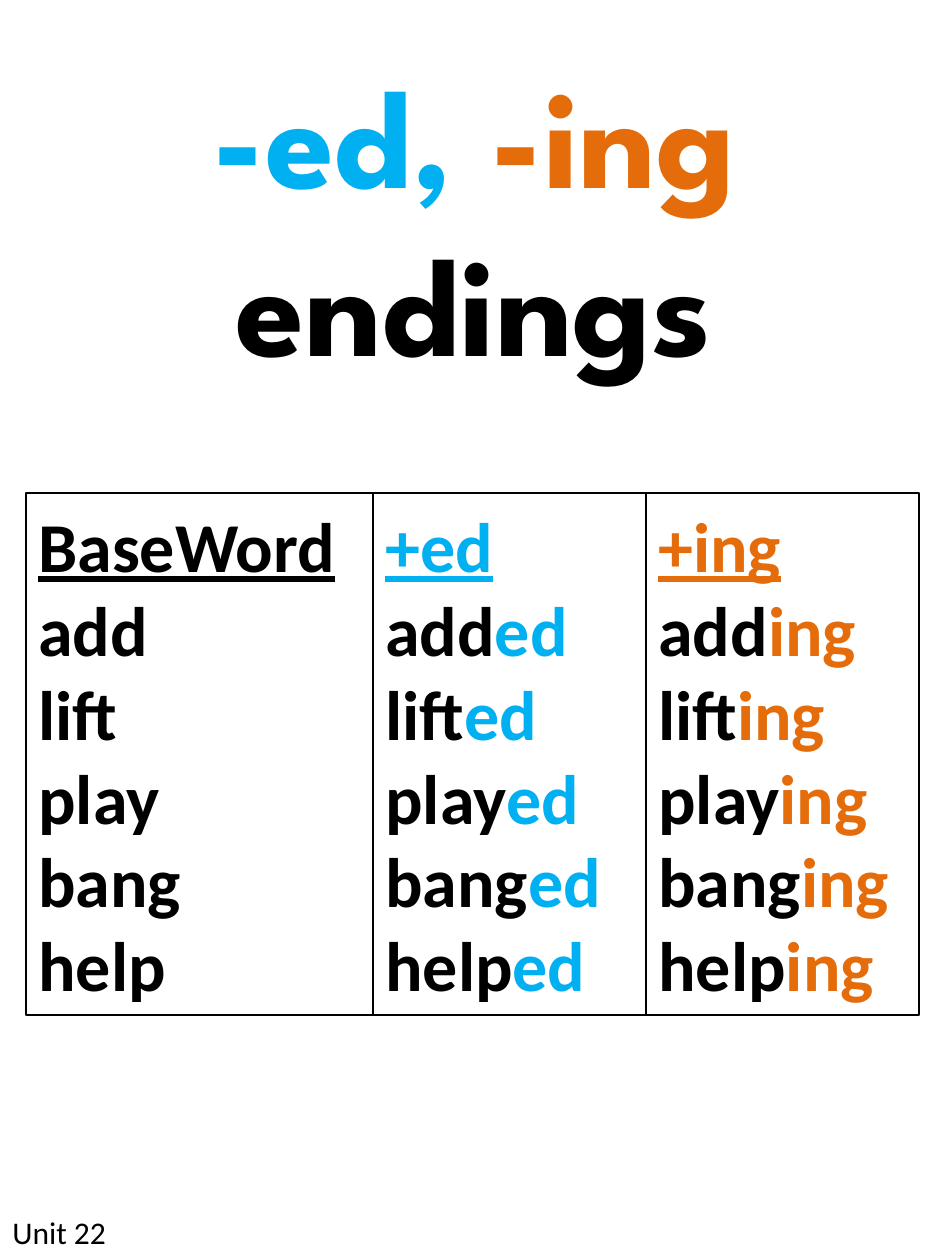
from pptx import Presentation
from pptx.dml.color import RGBColor
from pptx.enum.shapes import MSO_SHAPE
from pptx.enum.text import MSO_ANCHOR, MSO_AUTO_SIZE, PP_ALIGN
from pptx.util import Emu, Pt

BLACK = RGBColor(0x00, 0x00, 0x00)
BLUE = RGBColor(0x00, 0xB0, 0xF0)
ORANGE = RGBColor(0xE4, 0x6C, 0x0A)

# Content
TITLE = [("-ed, ", BLUE), ("-ing ", ORANGE), ("endings", BLACK)]
WORDS = ["add", "lift", "play", "bang", "help"]
COLUMNS = [  # heading, ending, colour, width
    ("BaseWord", "", BLACK, 347),
    ("+ed", "ed", BLUE, 273),
    ("+ing", "ing", ORANGE, 273),
]
UNIT = "Unit 22"

# Layout in px
TABLE_LEFT, TABLE_TOP, TABLE_HEIGHT = 26, 493, 522


def px(n):
    return Emu(round(n * 914400 / 126))


def add_run(p, text, size=40, color=BLACK, font="Calibri", bold=True, underline=False):
    r = p.add_run()
    r.text = text
    r.font.name, r.font.size = font, Pt(size)
    r.font.bold, r.font.underline = bold, underline
    r.font.color.rgb = color


def set_frame(tf, anchor=MSO_ANCHOR.TOP):
    tf.word_wrap = True
    tf.auto_size = MSO_AUTO_SIZE.NONE
    tf.vertical_anchor = anchor


prs = Presentation()
prs.slide_width, prs.slide_height = px(945), px(1260)
s = prs.slides.add_slide(prs.slide_layouts[5])

# Title
title = s.shapes.title
title.left, title.top, title.width, title.height = map(px, (28, 42, 892, 352))
set_frame(title.text_frame)
p = title.text_frame.paragraphs[0]
p.alignment = PP_ALIGN.CENTER
for text, color in TITLE:
    add_run(p, text, size=80, color=color, font="League Spartan")

# Word columns
left = TABLE_LEFT
for heading, ending, color, width in COLUMNS:
    sp = s.shapes.add_shape(MSO_SHAPE.RECTANGLE, px(left), px(TABLE_TOP),
                            px(width), px(TABLE_HEIGHT))
    sp.shadow.inherit = False
    sp.fill.background()
    sp.line.color.rgb = BLACK
    sp.line.width = Pt(0.75)
    tf = sp.text_frame
    set_frame(tf, MSO_ANCHOR.MIDDLE)
    p = tf.paragraphs[0]
    p.alignment = PP_ALIGN.LEFT
    add_run(p, heading, color=color, underline=True)
    for word in WORDS:
        p = tf.add_paragraph()
        p.alignment = PP_ALIGN.LEFT
        add_run(p, word)
        if ending:
            add_run(p, ending, color=color)
    left += width

# Unit label
label = s.shapes.add_textbox(px(0), px(1207), px(168), px(53))
set_frame(label.text_frame)
add_run(label.text_frame.paragraphs[0], UNIT, size=18, bold=False)

prs.save("out.pptx")
